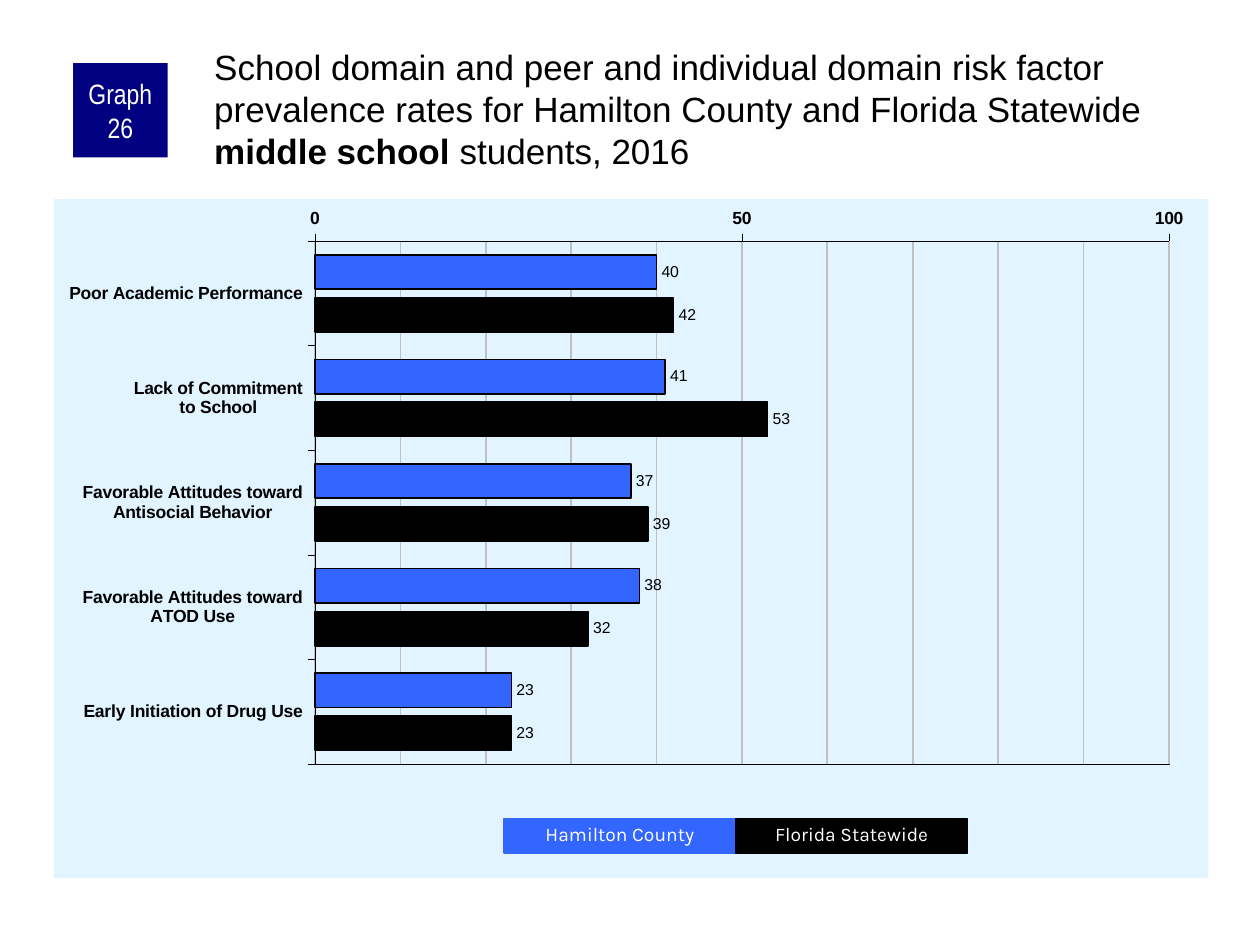
from dataclasses import dataclass

from lxml import etree
from pptx import Presentation
from pptx.chart.data import CategoryChartData
from pptx.dml.color import RGBColor
from pptx.enum.chart import (XL_AXIS_CROSSES, XL_CHART_TYPE, XL_LABEL_POSITION,
                             XL_TICK_MARK)
from pptx.enum.shapes import MSO_SHAPE
from pptx.enum.text import MSO_ANCHOR, MSO_AUTO_SIZE, PP_ALIGN
from pptx.oxml import parse_xml
from pptx.oxml.ns import nsdecls, qn
from pptx.util import Inches, Pt

BLACK = RGBColor(0x00, 0x00, 0x00)
WHITE = RGBColor(0xFF, 0xFF, 0xFF)
BLUE = RGBColor(0x33, 0x66, 0xFF)
NAVY = RGBColor(0x00, 0x00, 0x80)
GRID_GREY = RGBColor(0xC0, 0xC0, 0xC0)
PALE_BLUE = RGBColor(0xE1, 0xF4, 0xFF)

RECT = MSO_SHAPE.RECTANGLE
CENTER = PP_ALIGN.CENTER
MIDDLE = MSO_ANCHOR.MIDDLE
GROW = MSO_AUTO_SIZE.SHAPE_TO_FIT_TEXT
OUTSIDE = XL_TICK_MARK.OUTSIDE
NO_TICK = XL_TICK_MARK.NONE

LEGEND_LEFT, LEGEND_TOP = 4.0, 6.5
LEGEND_W, LEGEND_H = 1.84, 0.27
PLOT_LAYOUT = {"x": 0.226, "y": 0.062, "w": 0.74, "h": 0.77}


@dataclass
class Region:
    name: str
    color: RGBColor
    rates: tuple[int, ...]


RISK_FACTORS = (
    "Poor Academic Performance",
    "Lack of Commitment\nto School",
    "Favorable Attitudes toward\nAntisocial Behavior",
    "Favorable Attitudes toward\nATOD Use",
    "Early Initiation of Drug Use",
)
REGIONS = (
    Region("Hamilton County", BLUE, (40, 41, 37, 38, 23)),
    Region("Florida Statewide", BLACK, (42, 53, 39, 32, 23)),
)


def set_font(font, name: str, size: float, color: RGBColor, bold: bool = False) -> None:
    font.name = name
    font.size = Pt(size)
    font.bold = bold
    font.color.rgb = color


def set_line(line, color: RGBColor, width: float) -> None:
    line.color.rgb = color
    line.width = Pt(width)


def style_axis(axis) -> None:
    axis.major_tick_mark = OUTSIDE
    axis.minor_tick_mark = NO_TICK
    set_line(axis.format.line, BLACK, 0.25)
    set_font(axis.tick_labels.font, "Arial", 10, BLACK, bold=True)


def fix_plot_area(chart) -> None:
    """Place the inner plot area, outline it and fill the chart background."""
    plot_area = chart.plots[0]._element.getparent()
    for old in plot_area.findall(qn("c:layout")):
        plot_area.remove(old)
    layout = etree.Element(qn("c:layout"))
    manual = etree.SubElement(layout, qn("c:manualLayout"))
    settings = {"layoutTarget": "inner", "xMode": "edge", "yMode": "edge", **PLOT_LAYOUT}
    for tag, value in settings.items():
        etree.SubElement(manual, qn(f"c:{tag}")).set("val", str(value))
    plot_area.insert(0, layout)
    plot_area.append(parse_xml(
        f'<c:spPr {nsdecls("c", "a")}><a:noFill/><a:ln w="{Pt(0.25)}"><a:solidFill>'
        f'<a:srgbClr val="{BLACK}"/></a:solidFill></a:ln></c:spPr>'))
    plot_area.getparent().addnext(parse_xml(
        f'<c:spPr {nsdecls("c", "a")}><a:solidFill><a:srgbClr val="{PALE_BLUE}"/>'
        '</a:solidFill><a:ln><a:noFill/></a:ln></c:spPr>'))


def add_rate_chart(slide) -> None:
    data = CategoryChartData()
    data.categories = RISK_FACTORS
    for region in REGIONS:
        data.add_series(region.name, region.rates)
    chart = slide.shapes.add_chart(
        XL_CHART_TYPE.BAR_CLUSTERED, Inches(0.43), Inches(1.58),
        Inches(9.16), Inches(5.39), data).chart
    chart.has_title = False
    chart.has_legend = False
    set_font(chart.font, "Arial", 11.8, BLACK)

    plot = chart.plots[0]
    plot.gap_width = 80
    plot.overlap = -25
    plot.vary_by_categories = False
    for series, region in zip(plot.series, REGIONS):
        series.format.fill.solid()
        series.format.fill.fore_color.rgb = region.color
        set_line(series.format.line, BLACK, 1)
        labels = series.data_labels
        labels.show_value = True
        labels.position = XL_LABEL_POSITION.OUTSIDE_END
        set_font(labels.font, "Arial", 9, BLACK)

    factors, rates = chart.category_axis, chart.value_axis
    style_axis(factors)
    factors.reverse_order = True
    factors.crosses = XL_AXIS_CROSSES.MAXIMUM
    style_axis(rates)
    rates.minimum_scale, rates.maximum_scale = 0, 100
    rates.major_unit = 50
    rates.has_major_gridlines = rates.has_minor_gridlines = True
    set_line(rates.major_gridlines.format.line, GRID_GREY, 1)
    grid = rates._element.find(qn("c:minorGridlines"))
    grid.append(parse_xml(
        f'<c:spPr {nsdecls("c", "a")}><a:ln w="{Pt(1)}"><a:solidFill>'
        f'<a:srgbClr val="{GRID_GREY}"/></a:solidFill></a:ln></c:spPr>'))
    minor_unit = etree.Element(qn("c:minorUnit"))
    minor_unit.set("val", "10")
    rates._element.find(qn("c:majorUnit")).addnext(minor_unit)
    fix_plot_area(chart)


def add_label(slide, text: str, left: float, top: float, width: float, height: float,
              color: RGBColor, font: str, size: float):
    """Add a filled rectangle with centred white text."""
    sp = slide.shapes.add_shape(RECT, Inches(left), Inches(top),
                                Inches(width), Inches(height))
    sp.shadow.inherit = False
    sp.fill.solid()
    sp.fill.fore_color.rgb = color
    sp.line.fill.background()
    tf = sp.text_frame
    tf.text = text
    tf.word_wrap = True
    tf.vertical_anchor = MIDDLE
    p = tf.paragraphs[0]
    p.alignment = CENTER
    set_font(p.runs[0].font, font, size, WHITE)
    return sp


def add_title(slide) -> None:
    tf = slide.shapes.add_textbox(Inches(1.67), Inches(0.33),
                                  Inches(7.92), Inches(0.83)).text_frame
    tf.word_wrap = True
    tf.margin_left = tf.margin_top = Inches(0.03)
    tf.margin_right = tf.margin_bottom = 0
    p = tf.paragraphs[0]
    for text, bold in (
        ("School domain and peer and individual domain risk factor prevalence "
         "rates for Hamilton County and Florida Statewide ", False),
        ("middle school", True),
        (" students, 2016", False),
    ):
        r = p.add_run()
        r.text = text
        set_font(r.font, "Arial", 20, BLACK, bold)


def add_legend(slide) -> None:
    for i, region in enumerate(REGIONS):
        sp = add_label(slide, region.name, LEGEND_LEFT + i * LEGEND_W, LEGEND_TOP,
                       LEGEND_W, LEGEND_H, region.color, "Karla", 11)
        set_line(sp.line, region.color, 0.75)
        tf = sp.text_frame
        tf.auto_size = GROW
        tf.vertical_anchor = MSO_ANCHOR.TOP
        tf.paragraphs[0].line_spacing = 0.9


def main() -> None:
    prs = Presentation()
    prs.slide_width, prs.slide_height = Inches(10), Inches(7.5)
    slide = prs.slides.add_slide(prs.slide_layouts[6])
    add_rate_chart(slide)
    badge = add_label(slide, "Graph 26", 0.58, 0.5, 0.75, 0.75, NAVY, "Arial Narrow", 16)
    tf = badge.text_frame
    tf.margin_left = tf.margin_right = Inches(0.05)
    tf.margin_top = tf.margin_bottom = 0
    add_title(slide)
    add_legend(slide)
    prs.save("out.pptx")


if __name__ == "__main__":
    main()
